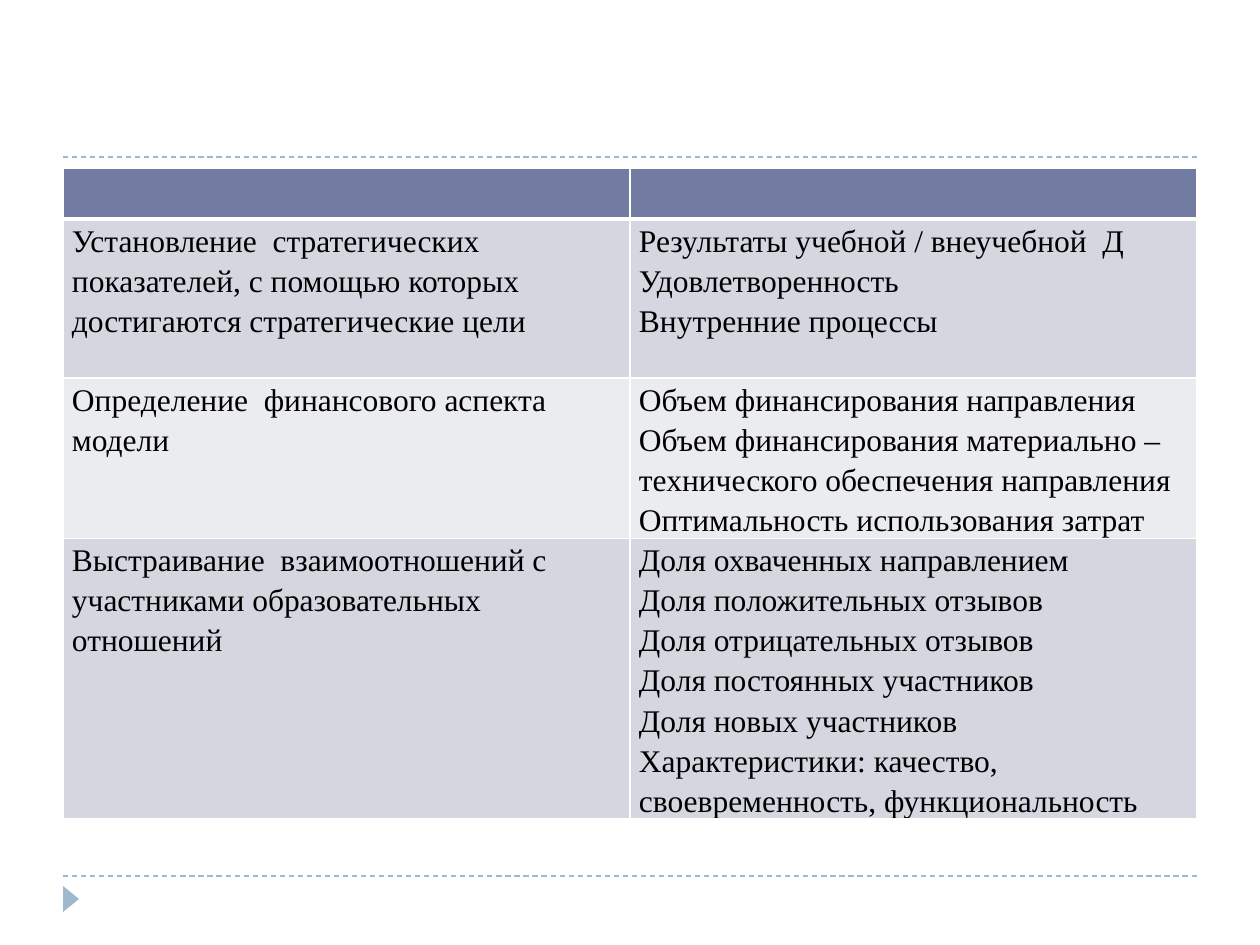
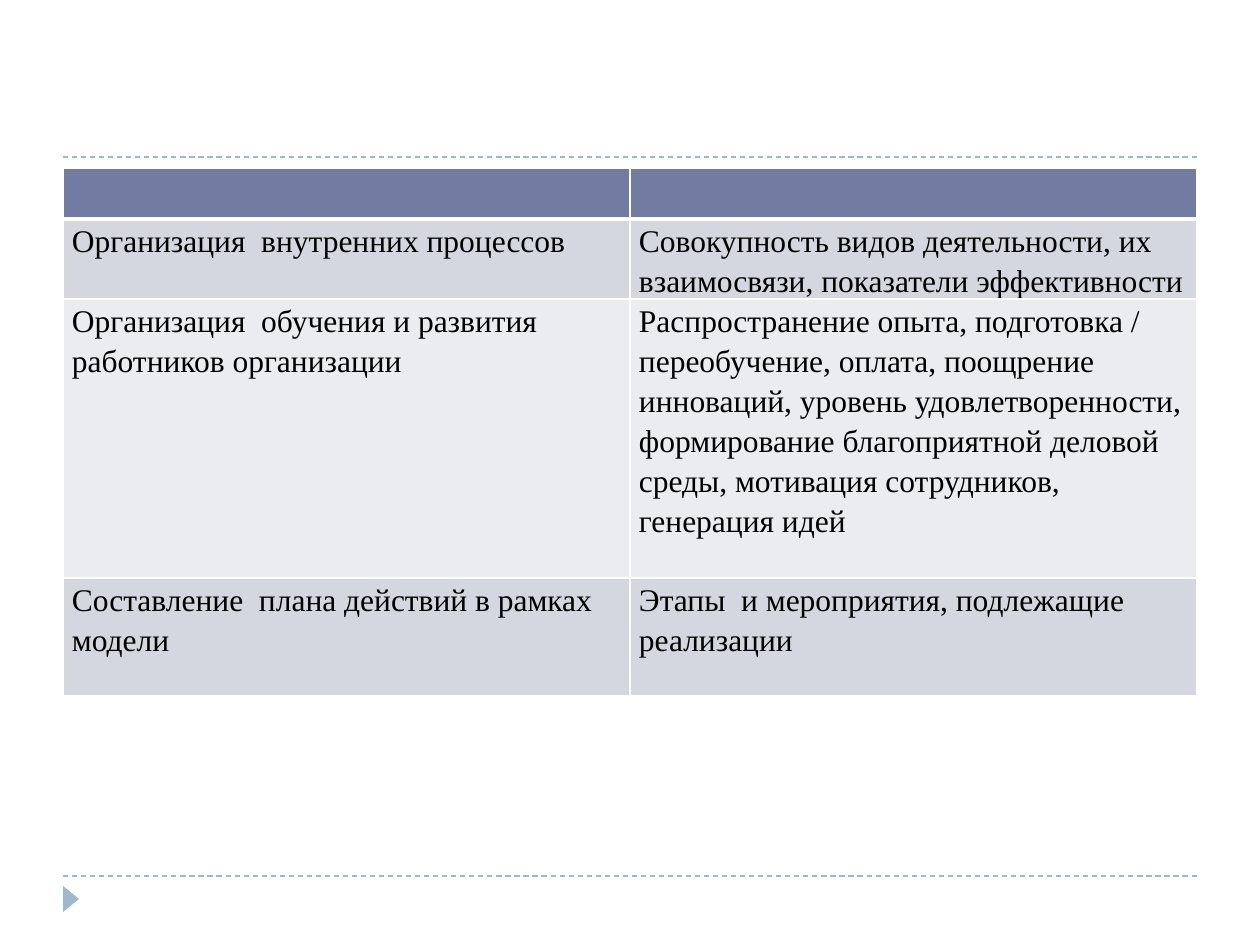
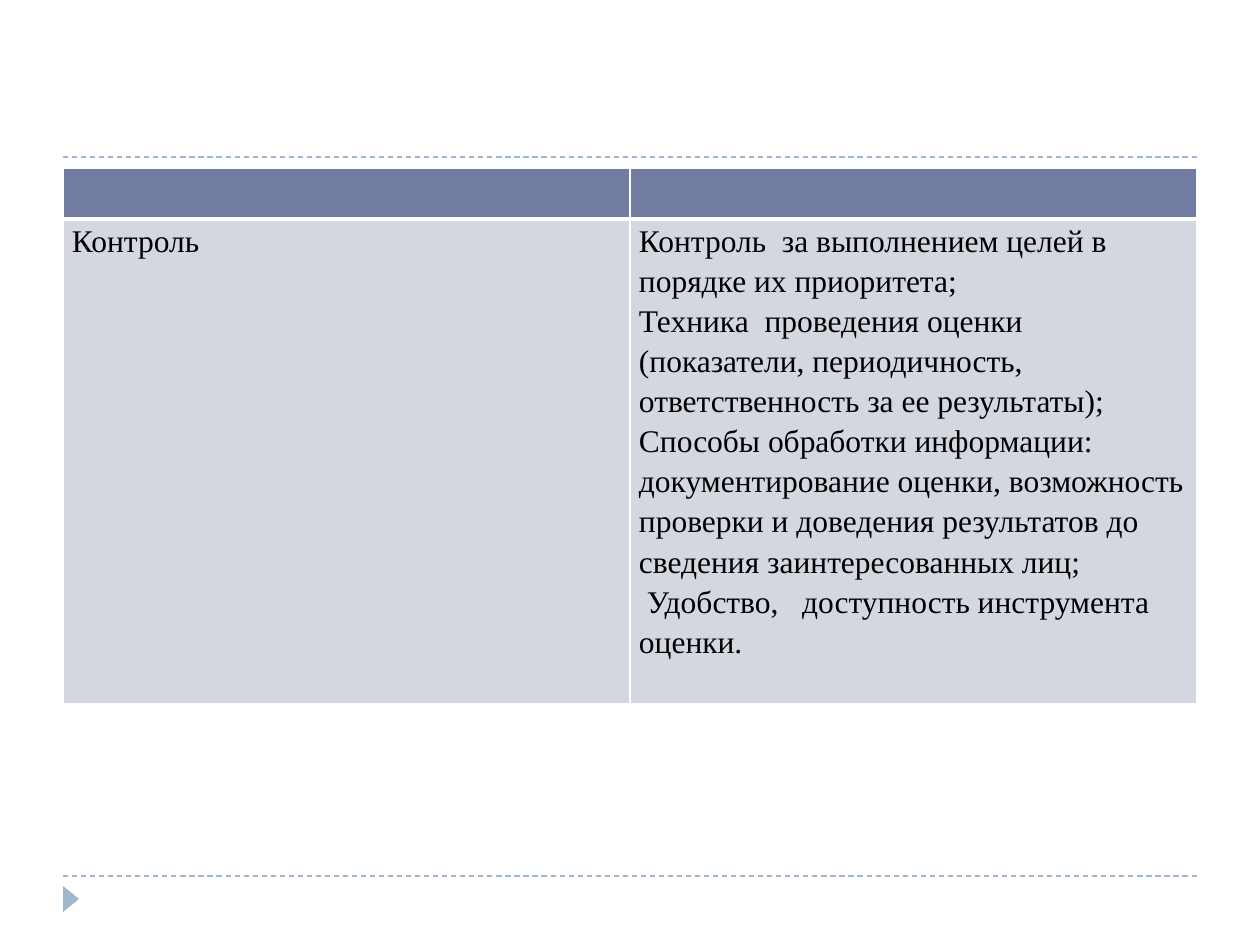
"""Build three slides of two-column tables on the stages of a strategic model."""
from dataclasses import dataclass

from lxml.etree import SubElement
from pptx import Presentation
from pptx.dml.color import RGBColor
from pptx.enum.dml import MSO_LINE
from pptx.enum.shapes import MSO_CONNECTOR, MSO_SHAPE
from pptx.oxml.ns import qn
from pptx.util import Emu, Pt


@dataclass(frozen=True)
class Theme:
    accent: str = "9FB8CD"
    header: str = "727CA3"
    bands: tuple = ("D5D7E0", "EBECF0")
    border: str = "FFFFFF"
    text: str = "000000"
    font: str = "Times New Roman"
    size: int = 18
    leading: float = 1.15
    rule: float = 0.75
    thin: int = 1
    thick: int = 3


def px(count):
    return Emu(round(count * 914400 / 126))


def style_cell(cell, fill, top, bottom):
    cell.margin_left = cell.margin_right = px(9)
    cell.margin_top = cell.margin_bottom = 0
    properties = cell._tc.get_or_add_tcPr()
    widths = {"a:lnL": theme.thin, "a:lnR": theme.thin, "a:lnT": top, "a:lnB": bottom}
    for side, width in widths.items():
        line = SubElement(properties, qn(side), w=str(Pt(width)))
        solid = SubElement(line, qn("a:solidFill"))
        SubElement(solid, qn("a:srgbClr"), val=theme.border)
    cell.fill.solid()
    cell.fill.fore_color.rgb = RGBColor.from_string(fill)
    for para in cell.text_frame.paragraphs:
        para.line_spacing = theme.leading
        for span in para.runs:
            span.font.name = theme.font
            span.font.size = Pt(theme.size)
            span.font.bold = False
            span.font.color.rgb = RGBColor.from_string(theme.text)


theme = Theme()
accent = RGBColor.from_string(theme.accent)
LEFT, WIDTH, TABLE_TOP, HEADER_HEIGHT = 63, 1134, 168, 51
RULES = (876, 157)

stages_by_page = [
    [
        (159, "Установление  стратегических показателей, с помощью которых достигаются стратегические цели",
         ["Результаты учебной / внеучебной  Д", "Удовлетворенность", "Внутренние процессы"]),
        (160, "Определение  финансового аспекта модели",
         ["Объем финансирования направления",
          "Объем финансирования материально – технического обеспечения направления",
          "Оптимальность использования затрат"]),
        (280, "Выстраивание  взаимоотношений с участниками образовательных отношений",
         ["Доля охваченных направлением", "Доля положительных отзывов", "Доля отрицательных отзывов",
          "Доля постоянных участников", "Доля новых участников",
          "Характеристики: качество, своевременность, функциональность"]),
    ],
    [
        (80, "Организация  внутренних процессов",
         ["Совокупность видов деятельности, их взаимосвязи, показатели эффективности"]),
        (279, "Организация  обучения и развития работников организации",
         ["Распространение опыта, подготовка / переобучение, оплата, поощрение инноваций, "
          "уровень удовлетворенности, формирование благоприятной деловой среды, "
          "мотивация сотрудников, генерация идей"]),
        (118, "Составление  плана действий в рамках модели",
         ["Этапы  и мероприятия, подлежащие реализации"]),
    ],
    [
        (485, "Контроль",
         ["Контроль  за выполнением целей в порядке их приоритета;",
          "Техника  проведения оценки (показатели, периодичность,  ответственность за ее результаты);",
          "Способы обработки информации: документирование оценки, возможность проверки "
          "и доведения результатов до сведения заинтересованных лиц;",
          " Удобство,   доступность инструмента оценки."]),
    ],
]

deck = Presentation()
deck.slide_width, deck.slide_height = px(1260), px(945)

for stages in stages_by_page:
    page = deck.slides.add_slide(deck.slide_layouts[6])

    for height in RULES:
        rule = page.shapes.add_connector(
            MSO_CONNECTOR.STRAIGHT, px(LEFT), px(height), px(LEFT + WIDTH), px(height))
        rule.line.color.rgb = accent
        rule.line.width = Pt(theme.rule)
        rule.line.dash_style = MSO_LINE.DASH
        SubElement(rule._element.spPr, qn("a:effectLst"))

    marker = page.shapes.add_shape(MSO_SHAPE.ISOSCELES_TRIANGLE, px(58), px(891), px(26), px(16))
    marker.rotation = 90
    marker.shadow.inherit = False
    marker.fill.solid()
    marker.fill.fore_color.rgb = accent
    marker.line.fill.background()

    heights = [HEADER_HEIGHT] + [stage[0] for stage in stages]
    table = page.shapes.add_table(
        len(heights), 2, px(LEFT), px(TABLE_TOP), px(WIDTH), px(sum(heights))).table
    table.horz_banding = False
    for row, height in zip(table.rows, heights):
        row.height = px(height)

    for cell in table.rows[0].cells:
        style_cell(cell, theme.header, theme.thin, theme.thick)
    for index, (height, stage, measures) in enumerate(stages):
        top = theme.thin if index else theme.thick
        for cell, text in zip(table.rows[index + 1].cells, (stage, "\n".join(measures))):
            cell.text_frame.text = text
            style_cell(cell, theme.bands[index % 2], top, theme.thin)

deck.save("out.pptx")
